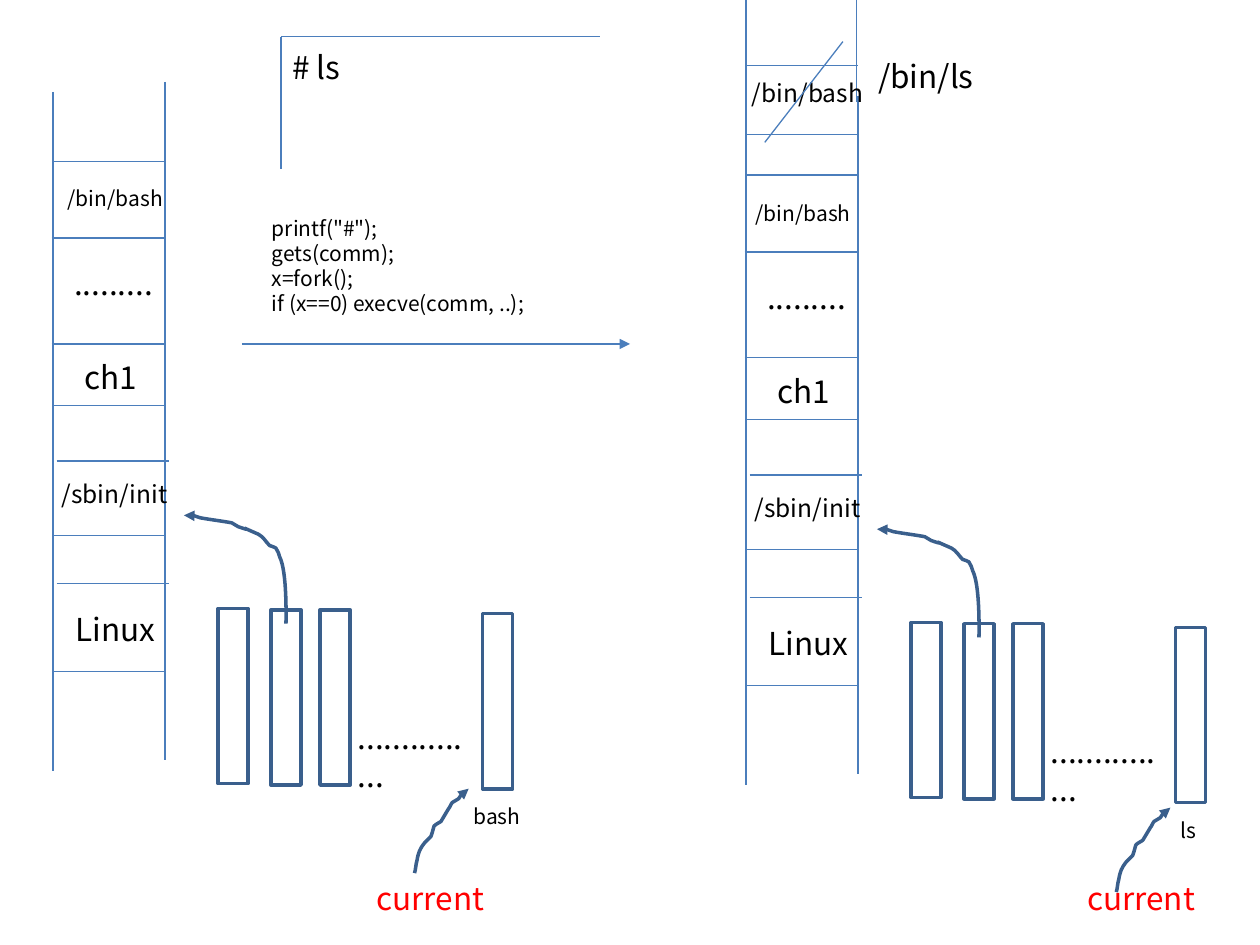
from lxml import etree
from pptx import Presentation
from pptx.dml.color import RGBColor
from pptx.enum.shapes import MSO_CONNECTOR, MSO_SHAPE
from pptx.enum.text import MSO_AUTO_SIZE
from pptx.oxml.ns import qn
from pptx.util import Inches, Pt

STRAIGHT = MSO_CONNECTOR.STRAIGHT
RECTANGLE = MSO_SHAPE.RECTANGLE
GROW = MSO_AUTO_SIZE.SHAPE_TO_FIT_TEXT
FONT = "Noto Sans CJK KR"
COLORS = {"text": "000000", "current": "FF0000", "rule": "4B7EBC", "process": "3A5F8C"}

COLUMN_WIDTH = 0.89
# Dividers of the memory column: left shift and depth below its top
DIVIDERS = [(0, 0.63), (-0.01, 1.24), (-0.01, 2.08), (0, 2.57),
            (0.03, 3.01), (0, 3.6), (0.03, 3.98), (0, 4.68)]
# Memory labels: text, left, top, width, size
MEMORY_LABELS = [(".........", 0.07, 1.4, 1.07, 18), ("ch1", 0.15, 2.14, 1.27, 18),
                 ("/sbin/init", -0.03, 3.1, 1.46, 14), ("Linux", 0.08, 4.14, 1.33, 18)]
PROCESSES = [(1.31, 4.18), (1.73, 4.19), (2.12, 4.19), (3.41, 4.22)]

# Curves relative to their start: six numbers are a Bézier segment, two a straight one
INIT_CURVE = [(0, -0.04, 0.01, -0.41, -0.05, -0.53), (-0.06, -0.55, -0.06, -0.58, -0.08, -0.6),
              (-0.09, -0.61, -0.11, -0.61, -0.13, -0.62),
              (-0.16, -0.65, -0.18, -0.69, -0.22, -0.71),
              (-0.45, -0.81, -0.21, -0.71, -0.38, -0.77),
              (-0.4, -0.78, -0.41, -0.79, -0.43, -0.8),
              (-0.48, -0.81, -0.63, -0.83, -0.68, -0.84),
              (-0.77, -0.87, -0.72, -0.86, -0.81, -0.86)]
CURRENT_CURVE = [(0.01, -0.03, 0.01, -0.07, 0.02, -0.1), (0.03, -0.16, 0.04, -0.19, 0.08, -0.24),
                 (0.1, -0.26, 0.11, -0.27, 0.13, -0.29), (0.17, -0.4, 0.13, -0.36, 0.21, -0.41),
                 (0.27, -0.51), (0.28, -0.52, 0.29, -0.55, 0.3, -0.56), (0.35, -0.59),
                 (0.36, -0.6, 0.37, -0.62, 0.38, -0.64), (0.39, -0.65, 0.43, -0.67, 0.43, -0.67)]


def color(name):
    return RGBColor.from_string(COLORS[name])


def style_line(shape, color_name, width, arrow=False):
    shape.line.color.rgb = color(color_name)
    shape.line.width = Pt(width)
    if arrow:
        outline = shape.line._get_or_add_ln()
        etree.SubElement(outline, qn("a:tailEnd"), type="triangle")


def add_line(slide, start, end, arrow=False):
    connector = slide.shapes.add_connector(STRAIGHT, *map(Inches, (*start, *end)))
    style_line(connector, "rule", 0.75, arrow)
    etree.SubElement(connector._element.spPr, qn("a:effectLst"))


def add_text(slide, lines, left, top, width, size, color_name="text", height=None):
    height = height or 0.1 + len(lines) * size / 60
    box = slide.shapes.add_textbox(*map(Inches, (left, top, width, height)))
    frame = box.text_frame
    frame.word_wrap = True
    frame.auto_size = GROW
    for index, line in enumerate(lines):
        paragraph = frame.add_paragraph() if index else frame.paragraphs[0]
        run = paragraph.add_run()
        run.text = line
        run.font.name = FONT
        run.font.size = Pt(size)
        run.font.color.rgb = color(color_name)


def bend_segments(shape, segments):
    """Turn the straight steps that have control points into Bézier steps."""
    start = shape._element.find(".//" + qn("a:moveTo")).find(qn("a:pt"))
    start_x, start_y = int(start.get("x")), int(start.get("y"))
    steps = list(shape._element.iter(qn("a:lnTo")))
    for step, segment in zip(steps, segments):
        if len(segment) == 2:
            continue
        bend = etree.Element(qn("a:cubicBezTo"))
        for x, y in zip(segment[::2], segment[1::2]):
            etree.SubElement(bend, qn("a:pt"), x=str(start_x + Inches(x)),
                             y=str(start_y + Inches(y)))
        step.getparent().replace(step, bend)


def add_curved_arrow(slide, left, top, segments):
    builder = slide.shapes.build_freeform(Inches(left), Inches(top))
    ends = [(Inches(left + segment[-2]), Inches(top + segment[-1])) for segment in segments]
    builder.add_line_segments(ends, close=False)
    arrow = builder.convert_to_shape()
    bend_segments(arrow, segments)
    arrow.shadow.inherit = False
    arrow.fill.background()
    style_line(arrow, "process", 2, arrow=True)


def add_memory_column(slide, left, top, shell_left, shell_top, shell_width):
    right = left + COLUMN_WIDTH
    add_line(slide, (left, top + 0.08), (left, top + 5.47))
    add_line(slide, (right, top), (right, top + 5.38))
    for shift, depth in DIVIDERS:
        add_line(slide, (left + shift, top + depth), (right + shift, top + depth))
    add_text(slide, ["/bin/bash"], left + shell_left, top + shell_top, shell_width, 12)
    for text, x, y, width, size in MEMORY_LABELS:
        add_text(slide, [text], left + x, top + y, width, size)


def add_process_list(slide, left, top, name, name_left, current, pointer):
    for x, y in PROCESSES:
        process = slide.shapes.add_shape(
            RECTANGLE, *map(Inches, (left + x, top + y, 0.24, 1.39)))
        process.shadow.inherit = False
        process.fill.background()
        style_line(process, "process", 2)
    add_text(slide, ["..............."], left + 2.32, top + 5, 1.07, 18)
    add_curved_arrow(slide, left + 1.85, top + 4.3, INIT_CURVE)
    add_text(slide, [name], left + name_left, top + 5.68, 0.93, 12)
    add_text(slide, ["current"], left + current[0], top + current[1], 1.21, 18, "current")
    add_curved_arrow(slide, left + pointer[0], top + pointer[1], CURRENT_CURVE)


def add_replaced_program(slide, left, top):
    """Extend the column upwards with the child, whose program is struck out."""
    right = left + COLUMN_WIDTH
    add_line(slide, (left, top + 0.84), (left, top))
    add_line(slide, (right - 0.01, top + 0.81), (right - 0.01, top - 0.02))
    for depth in (0.52, 1.07):
        add_line(slide, (left, top + depth), (right, top + depth))
    add_text(slide, ["/bin/bash"], left - 0.05, top + 0.57, 1.46, 14)
    add_text(slide, ["/bin/ls"], left + 0.95, top + 0.4, 1.29, 18)
    add_line(slide, (left + 0.77, top + 0.33), (left + 0.15, top + 1.13))


def add_terminal(slide, left, top):
    add_line(slide, (left + 2.53, top), (left, top))
    add_line(slide, (left, top), (left, top + 1.05))
    add_text(slide, ["# ls"], left - 0.01, top + 0.04, 1.65, 18, height=0.71)


def add_shell_code(slide, left, top):
    code = ['printf("#");', "gets(comm);", "x=fork();", "if (x==0) execve(comm, ..);"]
    add_text(slide, code, left + 0.14, top, 2.69, 12, height=0.91)
    add_line(slide, (left, top + 1.07), (left + 3.08, top + 1.07), arrow=True)


def main():
    presentation = Presentation()
    presentation.slide_width = Inches(10)
    presentation.slide_height = Inches(7.5)
    slide = presentation.slides.add_slide(presentation.slide_layouts[6])

    before, after = (0.42, 0.65), (5.92, 0.76)
    add_memory_column(slide, *after, shell_left=-0.02, shell_top=0.78, shell_width=1.16)
    add_process_list(slide, *after, "ls", 3.35, current=(2.61, 6.17), pointer=(2.94, 6.32))
    add_memory_column(slide, *before, shell_left=0.02, shell_top=0.77, shell_width=1.27)
    add_process_list(slide, *before, "bash", 3.24, current=(2.47, 6.28), pointer=(2.87, 6.28))
    add_terminal(slide, 2.23, 0.29)
    add_replaced_program(slide, after[0], 0)
    add_shell_code(slide, 1.92, 1.66)

    presentation.save("out.pptx")


if __name__ == "__main__":
    main()
